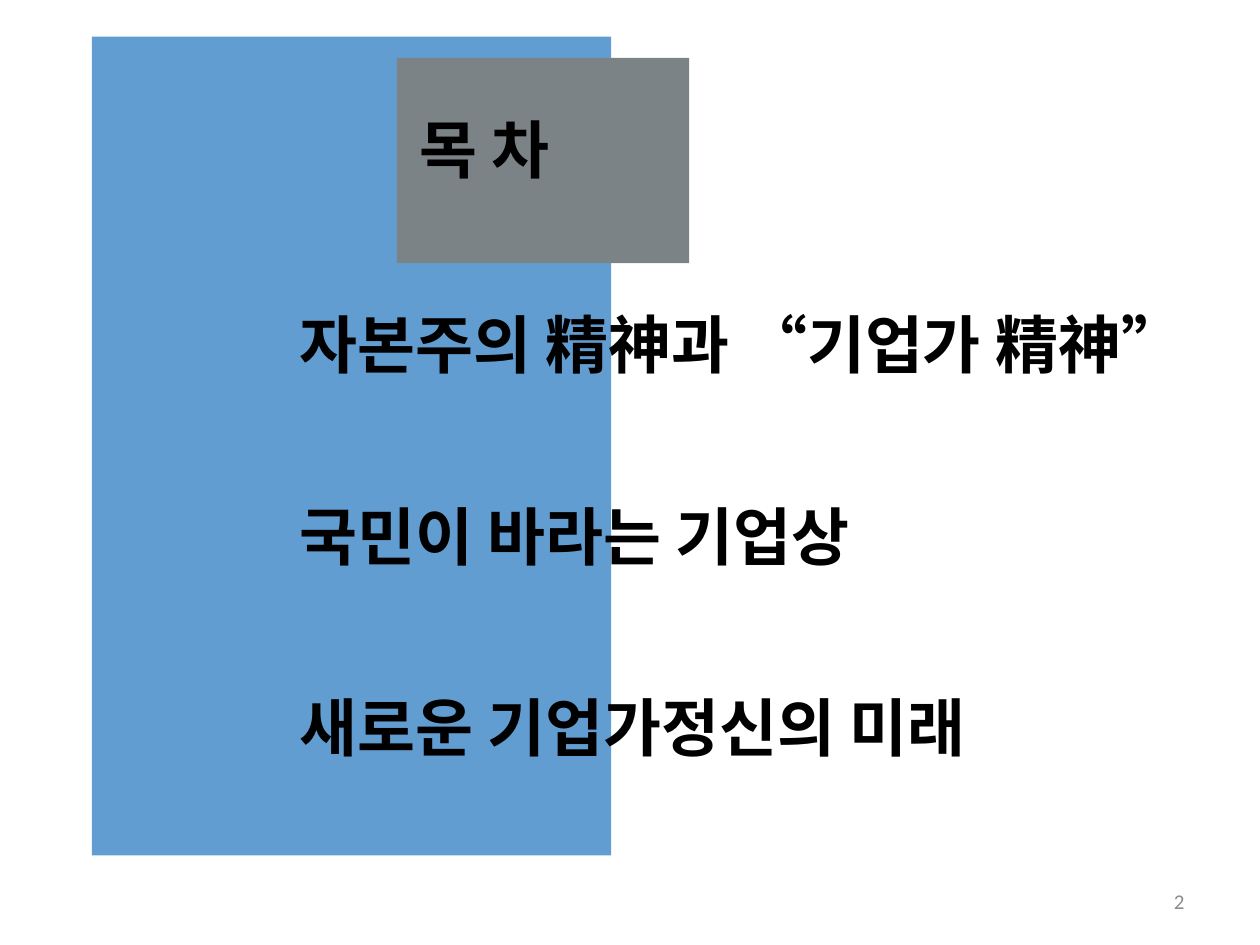
from pptx import Presentation
from pptx.dml.color import RGBColor
from pptx.enum.shapes import MSO_SHAPE as Shape
from pptx.enum.text import MSO_ANCHOR as Anchor, PP_ALIGN as Align
from pptx.util import Inches, Pt


def color(code):
    return RGBColor.from_string(code)


def add_rect(slide, box, fill):
    rect = slide.shapes.add_shape(Shape.RECTANGLE, *map(Inches, box))
    rect.shadow.inherit = False
    rect.fill.solid()
    rect.fill.fore_color.rgb = color(fill)
    rect.line.fill.background()


def add_text(slide, box, text, size=36, font="Arial", ink="000000", bold=True,
             wrap=False, align=Align.LEFT, anchor=Anchor.TOP, space=1.2):
    frame = slide.shapes.add_textbox(*map(Inches, box)).text_frame
    frame.word_wrap = wrap
    frame.vertical_anchor = anchor
    para = frame.paragraphs[0]
    para.alignment = align
    para.line_spacing = space
    run = para.add_run()
    run.text = text
    run.font.size = Pt(size)
    run.font.name = font
    run.font.bold = bold
    run.font.color.rgb = color(ink)


def add_title(slide, box, text):
    left, top, width, height = box
    add_rect(slide, box, "7C8387")
    add_text(slide, (left + 0.08, top + 0.25, 1.39, 0.76), text)


def add_topics(slide, box, topics):
    """Stack the topics at equal steps down the box."""
    left, top, width, height = box
    step = height / len(topics)
    for i, (text, wide, font) in enumerate(topics):
        add_text(slide, (left, top + i * step, wide, 0.76), text, font=font)


def add_number(slide, box, number):
    add_text(slide, box, str(number), size=12, font="Calibri", ink="8C8C8C",
             bold=False, wrap=True, align=Align.RIGHT, anchor=Anchor.MIDDLE,
             space=1.0)


def main():
    deck = Presentation()
    deck.slide_width, deck.slide_height = Inches(10), Inches(7.5)
    slide = deck.slides.add_slide(deck.slide_layouts[6])

    add_rect(slide, (0.73, 0.29, 4.12, 6.5), "629DD1")
    add_title(slide, (3.15, 0.46, 2.32, 1.63), "목 차")
    add_topics(slide, (2.28, 2.26, 7.22, 4.55), [
        ("자본주의 精神과 “기업가 精神”", 7.22, "Calibri"),
        ("국민이 바라는 기업상", 5.1, "Arial"),
        ("새로운 기업가정신의 미래", 6.11, "Arial"),
    ])
    add_number(slide, (7.17, 6.95, 2.33, 0.4), 2)
    deck.save("out.pptx")


if __name__ == "__main__":
    main()
